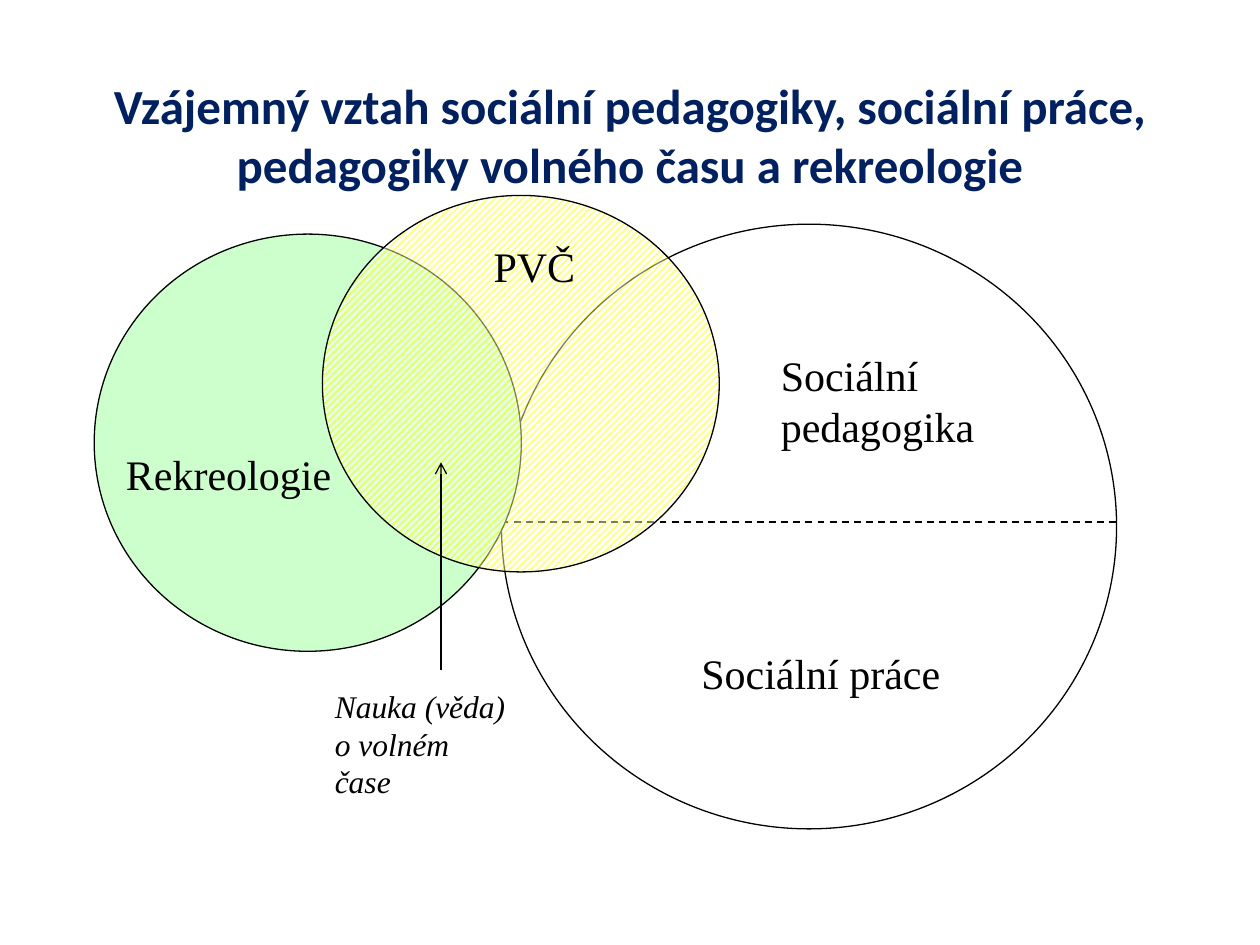
from dataclasses import dataclass

from lxml import etree
from pptx import Presentation
from pptx.dml.color import RGBColor
from pptx.enum.dml import MSO_LINE, MSO_PATTERN
from pptx.enum.shapes import MSO_CONNECTOR, MSO_SHAPE
from pptx.enum.text import MSO_ANCHOR, MSO_AUTO_SIZE, PP_ALIGN
from pptx.oxml.ns import qn
from pptx.util import Cm, Pt

ELLIPSE = MSO_SHAPE.OVAL
STRAIGHT = MSO_CONNECTOR.STRAIGHT
DASH = MSO_LINE.DASH
STRIPES = MSO_PATTERN.WIDE_UPWARD_DIAGONAL
MIDDLE = MSO_ANCHOR.MIDDLE
CENTER = PP_ALIGN.CENTER
GROW = MSO_AUTO_SIZE.SHAPE_TO_FIT_TEXT
TITLE_ONLY = 5


@dataclass(frozen=True)
class Theme:
    navy: RGBColor = RGBColor(0x00, 0x20, 0x60)
    black: RGBColor = RGBColor(0x00, 0x00, 0x00)
    white: RGBColor = RGBColor(0xFF, 0xFF, 0xFF)
    green: RGBColor = RGBColor(0xCC, 0xFF, 0xCC)
    yellow: RGBColor = RGBColor(0xFF, 0xFF, 0x00)
    title_font: str = "Calibri"
    label_font: str = "Times New Roman"
    title_size: int = 28
    label_size: int = 24
    note_size: int = 18
    thin: float = 0.75


THEME = Theme()


@dataclass(frozen=True)
class Box:
    """Position and size in centimetres."""
    left: float
    top: float
    width: float
    height: float

    def lengths(self) -> tuple:
        return Cm(self.left), Cm(self.top), Cm(self.width), Cm(self.height)


@dataclass(frozen=True)
class Field:
    """One discipline, drawn as an ellipse."""
    box: Box
    color: RGBColor
    striped: bool = False


@dataclass(frozen=True)
class Label:
    text: str
    box: Box


SOCIAL_FIELDS = Field(Box(10.11, 4.52, 12.4, 12.19), THEME.white)
RECREOLOGY = Field(Box(1.9, 4.72, 8.61, 8.41), THEME.green)
LEISURE_PEDAGOGY = Field(Box(6.5, 3.94, 8.0, 7.59), THEME.yellow, striped=True)

LABELS = [
    Label("Rekreologie", Box(2.29, 8.92, 4.65, 1.27)),
    Label("PVČ", Box(9.7, 4.72, 2.16, 1.27)),
    Label("Sociální\npedagogika", Box(15.49, 6.93, 4.42, 2.29)),
    Label("Sociální práce", Box(13.89, 12.93, 5.33, 1.27)),
]
SCIENCE_NOTE = Label("Nauka (věda)\no volném\nčase", Box(6.5, 13.72, 3.96, 2.54))


def write_text(frame, text: str, *, font: str, size: int, color: RGBColor,
               bold: bool = False, italic: bool = False, align=None) -> None:
    frame.text = text
    for paragraph in frame.paragraphs:
        paragraph.alignment = align
        for run in paragraph.runs:
            run.font.name = font
            run.font.size = Pt(size)
            run.font.bold = bold
            run.font.italic = italic
            run.font.color.rgb = color


def draw_field(slide, field: Field) -> None:
    ellipse = slide.shapes.add_shape(ELLIPSE, *field.box.lengths())
    ellipse.shadow.inherit = False
    if field.striped:
        ellipse.fill.patterned()
        ellipse.fill.pattern = STRIPES
        ellipse.fill.fore_color.rgb = field.color
        ellipse.fill.back_color.rgb = THEME.white
        # Half-transparent stripes let the lower fields show through
        pattern = ellipse._element.spPr.find(qn("a:pattFill"))
        for color in pattern.iter(qn("a:srgbClr")):
            etree.SubElement(color, qn("a:alpha"), val="50000")
    else:
        ellipse.fill.solid()
        ellipse.fill.fore_color.rgb = field.color
    ellipse.line.color.rgb = THEME.black
    ellipse.line.width = Pt(THEME.thin)


def draw_line(slide, start: tuple[float, float], end: tuple[float, float], *,
              width: float, dash=None, arrow: bool = False) -> None:
    line = slide.shapes.add_connector(
        STRAIGHT, *(Cm(value) for value in start + end))
    line.line.color.rgb = THEME.black
    line.line.width = Pt(width)
    if dash is not None:
        line.line.dash_style = dash
    if arrow:
        etree.SubElement(line.line._get_or_add_ln(), qn("a:tailEnd"), type="arrow")
    etree.SubElement(line._element.spPr, qn("a:effectLst"))


def draw_label(slide, label: Label, *, size: int, wrap: bool = False,
               italic: bool = False) -> None:
    frame = slide.shapes.add_textbox(*label.box.lengths()).text_frame
    frame.word_wrap = wrap
    frame.auto_size = GROW
    write_text(frame, label.text, font=THEME.label_font, size=size,
               color=THEME.black, italic=italic)


def main() -> None:
    deck = Presentation()
    deck.slide_width, deck.slide_height = Cm(25.4), Cm(19.05)
    slide = deck.slides.add_slide(deck.slide_layouts[TITLE_ONLY])

    # Title
    title = slide.shapes.title
    title.left, title.top, title.width, title.height = Box(
        1.9, 1.12, 21.59, 3.18).lengths()
    title.text_frame.vertical_anchor = MIDDLE
    write_text(title.text_frame,
               "Vzájemný vztah sociální pedagogiky, sociální práce, "
               "pedagogiky volného času a rekreologie",
               font=THEME.title_font, size=THEME.title_size,
               color=THEME.navy, bold=True, align=CENTER)

    # Overlapping fields, with the social one split in two
    draw_field(slide, SOCIAL_FIELDS)
    social = SOCIAL_FIELDS.box
    draw_line(slide, (social.left, 10.52), (social.left + social.width, 10.52),
              width=1, dash=DASH)
    draw_field(slide, RECREOLOGY)
    draw_field(slide, LEISURE_PEDAGOGY)

    # Names of the fields
    for label in LABELS:
        draw_label(slide, label, size=THEME.label_size)

    # Note pointing at the overlap
    draw_line(slide, (8.89, 13.51), (8.89, 9.32), width=THEME.thin, arrow=True)
    draw_label(slide, SCIENCE_NOTE, size=THEME.note_size, wrap=True, italic=True)

    deck.save("out.pptx")


if __name__ == "__main__":
    main()
